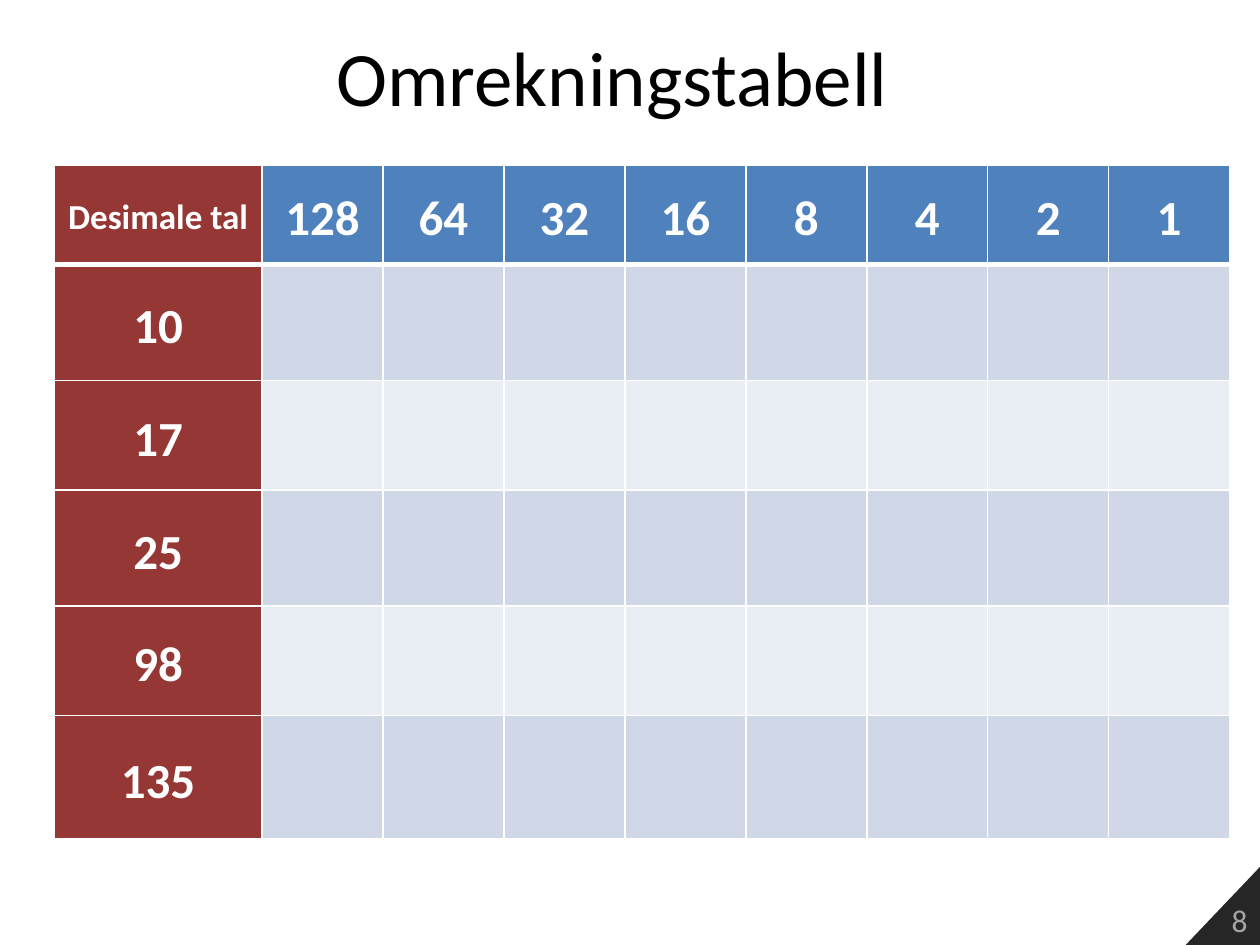
from dataclasses import dataclass

from lxml.etree import SubElement
from pptx import Presentation
from pptx.dml.color import RGBColor
from pptx.enum.text import MSO_ANCHOR as Anchor, PP_ALIGN as Align
from pptx.oxml.ns import qn
from pptx.util import Inches, Pt


@dataclass(frozen=True)
class Theme:
    font: str = "Calibri"
    black: str = "000000"
    white: str = "FFFFFF"
    red: str = "953735"
    blue: str = "4F81BD"
    bands: tuple = ("D0D8E8", "E9EDF4")
    corner: str = "262626"
    page_number: str = "A6A6A6"
    title_size: int = 44
    number_size: int = 28
    label_size: int = 20
    page_number_size: int = 18


@dataclass(frozen=True)
class CellStyle:
    fill: str
    text: str = ""
    size: int = 28
    top_line: float = 1
    bottom_line: float = 1


THEME = Theme()
POWERS = [2 ** exponent for exponent in range(7, -1, -1)]
DECIMALS = [10, 17, 25, 98, 135]
COLUMN_WIDTHS = [1.65] + [0.96] * len(POWERS)
ROW_HEIGHTS = [0.79, 0.92, 0.87, 0.92, 0.87, 0.98]
HEADER_LINE = 3


def add_text(para, text: str, size: int, color: str, align, bold=False) -> None:
    para.alignment = align
    span = para.add_run()
    span.text = text
    span.font.name = THEME.font
    span.font.size = Pt(size)
    span.font.bold = bold
    span.font.color.rgb = RGBColor.from_string(color)


def add_border(cell, side: str, width: float) -> None:
    properties = cell._tc.get_or_add_tcPr()
    line = SubElement(properties, qn(f"a:ln{side}"), w=str(Pt(width)))
    fill = SubElement(line, qn("a:solidFill"))
    SubElement(fill, qn("a:srgbClr"), val=THEME.white)


def draw_cell(cell, style: CellStyle) -> None:
    # Borders have to come before the fill in the cell properties
    for side, width in (("L", 1), ("R", 1), ("T", style.top_line), ("B", style.bottom_line)):
        add_border(cell, side, width)
    cell.fill.solid()
    cell.fill.fore_color.rgb = RGBColor.from_string(style.fill)
    cell.vertical_anchor = Anchor.MIDDLE
    cell.margin_left = cell.margin_right = Inches(0.07)
    cell.margin_top = cell.margin_bottom = 0
    if style.text:
        para = cell.text_frame.paragraphs[0]
        para.line_spacing = 1.15
        add_text(para, style.text, style.size, THEME.white, Align.CENTER, bold=True)


def table_styles() -> list[list[CellStyle]]:
    header = [CellStyle(THEME.red, "Desimale tal", THEME.label_size, bottom_line=HEADER_LINE)]
    header += [CellStyle(THEME.blue, str(power), THEME.number_size, bottom_line=HEADER_LINE)
               for power in POWERS]
    rows = [header]
    for index, number in enumerate(DECIMALS):
        top = HEADER_LINE if index == 0 else 1
        band = CellStyle(THEME.bands[index % 2], top_line=top)
        label = CellStyle(THEME.red, str(number), THEME.number_size, top_line=top)
        rows.append([label] + [band] * len(POWERS))
    return rows


def draw_table(page) -> None:
    frame = page.shapes.add_table(
        len(ROW_HEIGHTS), len(COLUMN_WIDTHS), Inches(0.43), Inches(1.31),
        Inches(sum(COLUMN_WIDTHS)), Inches(sum(ROW_HEIGHTS)))
    table = frame.table
    for column, width in zip(table.columns, COLUMN_WIDTHS):
        column.width = Inches(width)
    for row, height, styles in zip(table.rows, ROW_HEIGHTS, table_styles()):
        row.height = Inches(height)
        for cell, style in zip(row.cells, styles):
            draw_cell(cell, style)


def draw_corner(page) -> None:
    builder = page.shapes.build_freeform(Inches(9.41), Inches(7.5))
    builder.add_line_segments([(Inches(10), Inches(6.88)), (Inches(10), Inches(7.5))])
    corner = builder.convert_to_shape()
    corner.shadow.inherit = False
    corner.fill.solid()
    corner.fill.fore_color.rgb = RGBColor.from_string(THEME.corner)
    corner.line.fill.background()
    corner.text_frame.vertical_anchor = Anchor.BOTTOM
    add_text(corner.text_frame.paragraphs[0], "8", THEME.page_number_size,
             THEME.page_number, Align.RIGHT)


def draw_title(page) -> None:
    title = page.shapes.title
    title.left, title.top = Inches(0.43), Inches(0.13)
    title.width, title.height = Inches(9), Inches(0.94)
    title.text_frame.vertical_anchor = Anchor.MIDDLE
    add_text(title.text_frame.paragraphs[0], "Omrekningstabell ", THEME.title_size,
             THEME.black, Align.CENTER)


def main() -> None:
    deck = Presentation()
    deck.slide_width, deck.slide_height = Inches(10), Inches(7.5)
    page = deck.slides.add_slide(deck.slide_layouts[5])  # title only
    draw_corner(page)
    draw_title(page)
    draw_table(page)
    deck.save("out.pptx")


if __name__ == "__main__":
    main()
